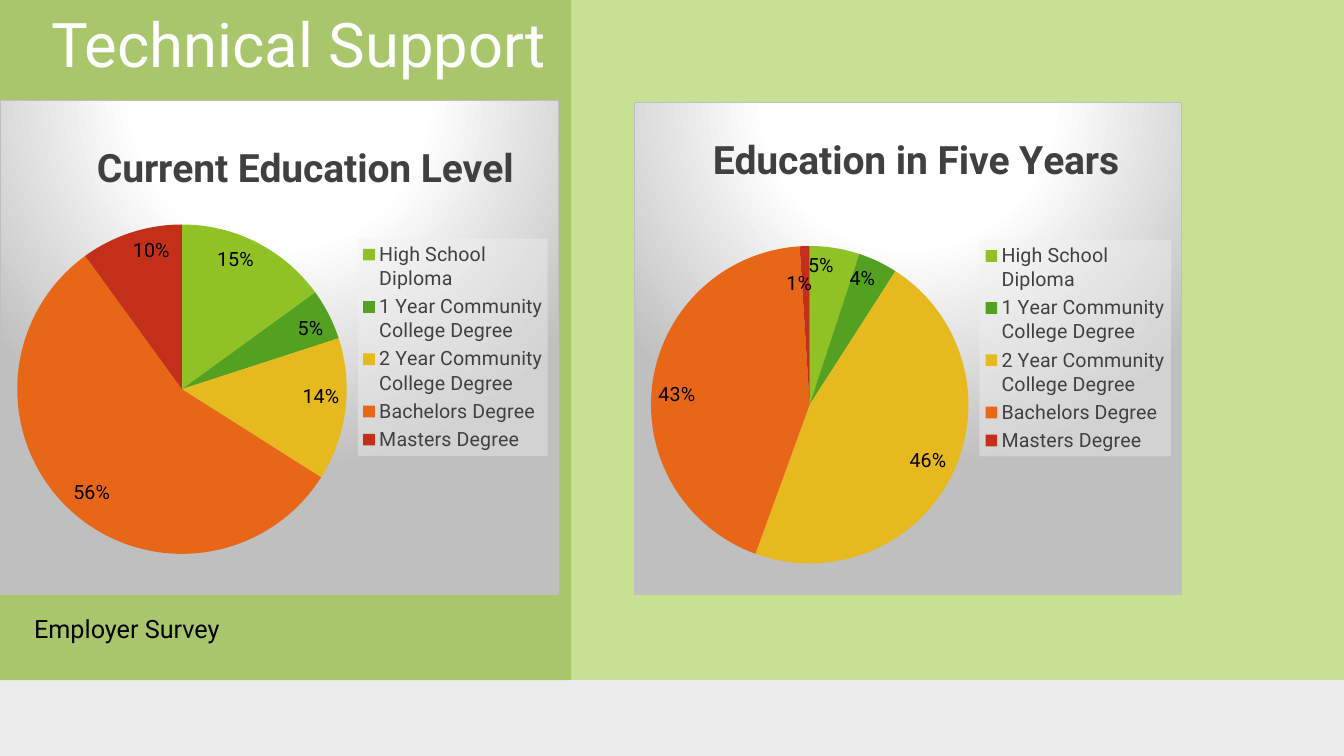
import pptx
import pptx.chart.data
import pptx.dml.color
import pptx.enum.chart
import pptx.enum.shapes
import pptx.enum.text
import pptx.oxml
import pptx.oxml.ns
import pptx.util

Pt = pptx.util.Pt
FONT = "Roboto"
COLORS = {
    "lime": "90C226", "olive": "6C921D", "footer": "EBEBEB", "white": "FFFFFF",
    "black": "000000", "gray": "404040", "silver": "BFBFBF", "legend": "F2F2F2",
}
DEGREES = {
    "High School Diploma": "90C226",
    "1 Year Community College Degree": "54A021",
    "2 Year Community College Degree": "E6B91E",
    "Bachelors Degree": "E76618",
    "Masters Degree": "C42F1A",
}
NAMESPACES = pptx.oxml.ns.nsdecls("a", "c")


def rgb(name):
    return pptx.dml.color.RGBColor.from_string(COLORS[name])


def set_font(font, size, color, bold=False):
    font.name = FONT
    font.size = Pt(size)
    font.bold = bold
    font.color.rgb = rgb(color)


def add_text(slide, text, box, size, color, line_spacing=1.0):
    shape = slide.shapes.add_textbox(*map(Pt, box))
    frame = shape.text_frame
    frame.word_wrap = True
    frame.vertical_anchor = pptx.enum.text.MSO_ANCHOR.TOP
    paragraph = frame.paragraphs[0]
    paragraph.line_spacing = line_spacing
    run = paragraph.add_run()
    run.text = text
    set_font(run.font, size, color)


def add_panel(slide, box, color, opacity=100):
    shape = slide.shapes.add_shape(
        pptx.enum.shapes.MSO_SHAPE.RECTANGLE, *map(Pt, box))
    shape.shadow.inherit = False
    shape.line.fill.background()
    shape.fill.solid()
    shape.fill.fore_color.rgb = rgb(color)
    if opacity < 100:
        fill_color = shape.element.xpath("./p:spPr/a:solidFill/a:srgbClr")[0]
        fill_color.append(pptx.oxml.parse_xml(
            f'<a:alpha {NAMESPACES} val="{opacity * 1000}"/>'))


def add_background(slide, width, height):
    footer_height = 54
    body_height = height - footer_height
    add_panel(slide, (0, 0, width, body_height), "lime", 50)
    add_panel(slide, (0, 0, 408, body_height), "olive", 32)
    add_panel(slide, (0, body_height, width, footer_height), "footer")


def set_layout(element, index, x, y, width=None, height=None, absolute=True):
    """Place a chart part by fractions of the chart's size."""
    for old in element.xpath("./c:layout"):
        element.remove(old)
    parts = []
    if element.tag.endswith("plotArea"):
        parts.append('<c:layoutTarget val="inner"/>')
    if absolute:
        parts.append('<c:xMode val="edge"/><c:yMode val="edge"/>')
    parts.append(f'<c:x val="{x}"/><c:y val="{y}"/>')
    if width:
        parts.append(f'<c:w val="{width}"/><c:h val="{height}"/>')
    element.insert(index, pptx.oxml.parse_xml(
        f'<c:layout {NAMESPACES}><c:manualLayout>{"".join(parts)}'
        '</c:manualLayout></c:layout>'))


def style_chart_area(chart):
    """Give the chart square corners, a radial gradient and a thin border."""
    space = chart.element
    for old in space.xpath("./c:roundedCorners"):
        space.remove(old)
    space.insert(len(space.xpath("./c:date1904")), pptx.oxml.parse_xml(
        f'<c:roundedCorners {NAMESPACES} val="0"/>'))
    stops = "".join(
        f'<a:gs pos="{position * 1000}"><a:srgbClr val="{COLORS[color]}"/></a:gs>'
        for position, color in ((0, "white"), (39, "white"), (100, "silver")))
    space.xpath("./c:chart")[0].addnext(pptx.oxml.parse_xml(
        f'<c:spPr {NAMESPACES}><a:gradFill><a:gsLst>{stops}</a:gsLst>'
        '<a:path path="circle">'
        '<a:fillToRect l="50000" t="-80000" r="50000" b="180000"/></a:path>'
        f'</a:gradFill><a:ln w="{Pt(0.75)}"><a:solidFill>'
        f'<a:srgbClr val="{COLORS["silver"]}"/></a:solidFill></a:ln></c:spPr>'))


def style_legend(chart, layout):
    chart.has_legend = True
    legend = chart.legend
    legend.position = pptx.enum.chart.XL_LEGEND_POSITION.RIGHT
    legend.include_in_layout = False
    set_font(legend.font, 14, "gray")
    element = chart.element.xpath(".//c:legend")[0]
    set_layout(element, 1, *layout)
    element.xpath("./c:overlay")[0].addnext(pptx.oxml.parse_xml(
        f'<c:spPr {NAMESPACES}><a:solidFill><a:srgbClr val="{COLORS["legend"]}">'
        '<a:alpha val="39000"/></a:srgbClr></a:solidFill></c:spPr>'))


def style_slices(series):
    for index, color in enumerate(DEGREES.values()):
        fill = series.points[index].format.fill
        fill.solid()
        fill.fore_color.rgb = pptx.dml.color.RGBColor.from_string(color)
    labels = series.data_labels
    labels.show_percentage = True
    labels.show_value = False
    labels.number_format = "0%"
    labels.number_format_is_linked = False
    labels.position = pptx.enum.chart.XL_LABEL_POSITION.INSIDE_END
    set_font(labels.font, 14, "black")


def move_label(series, index, x, y):
    """Shift one slice's percentage label by fractions of the chart's size."""
    label = series.points[index].data_label
    label.position = pptx.enum.chart.XL_LABEL_POSITION.INSIDE_END
    set_font(label.font, 14, "black")
    element = series.data_labels._element.xpath(
        f'./c:dLbl[c:idx/@val="{index}"]')[0]
    element.xpath("./c:showVal")[0].set("val", "0")
    element.xpath("./c:showPercent")[0].set("val", "1")
    set_layout(element, 1, x, y, absolute=False)


def add_pie(slide, box, title, values, title_at, plot_layout, legend_layout):
    data = pptx.chart.data.CategoryChartData()
    data.categories = list(DEGREES)
    data.add_series("Series 1", values)
    chart = slide.shapes.add_chart(
        pptx.enum.chart.XL_CHART_TYPE.PIE, *map(Pt, box), data).chart
    set_font(chart.font, 10, "black")
    style_chart_area(chart)

    chart.has_title = True
    run = chart.chart_title.text_frame.paragraphs[0].add_run()
    run.text = title
    set_font(run.font, 28, "gray", bold=True)
    set_layout(chart.element.xpath("./c:chart/c:title")[0], 1, *title_at)
    set_layout(chart.element.xpath(".//c:plotArea")[0], 0, *plot_layout)
    style_legend(chart, legend_layout)

    plot = chart.plots[0]
    plot.vary_by_categories = True
    style_slices(plot.series[0])
    return plot.series[0]


def build_survey_slide(slide, width, height):
    add_background(slide, width, height)
    add_text(slide, "Technical Support", (29.5, 10.8, 571, 67), 44, "white",
             line_spacing=0.8)
    add_pie(slide, (0, 71.3, 399.6, 353.5), "Current Education Level",
            (15, 5, 14, 56, 10), (0.16, 0.07),
            (0.03, 0.25, 0.59, 0.67), (0.64, 0.28, 0.34, 0.44))
    future = add_pie(slide, (452.9, 72.7, 391.7, 352.1), "Education in Five Years",
                     (5, 4, 46, 43, 1), (0.13, 0.05),
                     (0.03, 0.29, 0.58, 0.65), (0.63, 0.28, 0.35, 0.44))
    move_label(future, 4, -0.01, 0.04)
    add_text(slide, "Employer Survey", (17.3, 434.2, 195.8, 28.8), 18, "black")


def main():
    presentation = pptx.Presentation()
    width, height = 960, 540
    presentation.slide_width = Pt(width)
    presentation.slide_height = Pt(height)
    slide = presentation.slides.add_slide(presentation.slide_layouts[6])
    build_survey_slide(slide, width, height)
    presentation.save("out.pptx")


if __name__ == "__main__":
    main()
